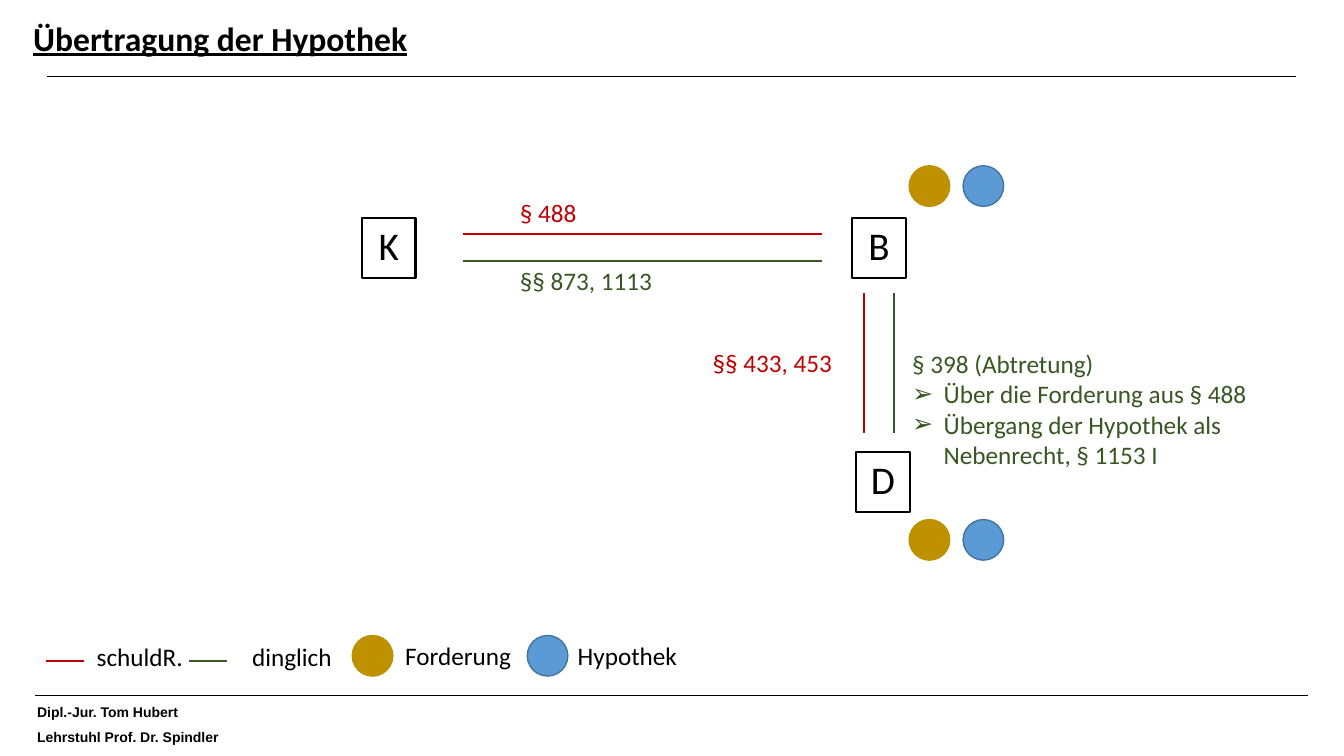
"""Build the slide on the transfer of a mortgage (Übertragung der Hypothek)."""
from lxml import etree
from pptx import Presentation
from pptx.dml.color import RGBColor
from pptx.enum.shapes import MSO_CONNECTOR, MSO_SHAPE
from pptx.enum.text import MSO_ANCHOR, MSO_AUTO_SIZE, PP_ALIGN
from pptx.oxml.ns import qn
from pptx.util import Pt

STRAIGHT = MSO_CONNECTOR.STRAIGHT
RECT, OVAL = MSO_SHAPE.RECTANGLE, MSO_SHAPE.OVAL
MIDDLE = MSO_ANCHOR.MIDDLE
LEFT, CENTER = PP_ALIGN.LEFT, PP_ALIGN.CENTER
NO_FIT = MSO_AUTO_SIZE.NONE

COLORS = {"black": "000000", "red": "C00000", "green": "385723",
          "gold": "BF9000", "blue": "5B9BD5", "rim": "43739E"}


def color(name):
    return RGBColor.from_string(COLORS[name])


def write(para, text, size, name, face="Calibri", bold=False):
    run = para.add_run()
    run.text = text
    font = run.font
    font.name, font.size, font.bold = face, Pt(size), bold
    font.color.rgb = color(name)
    return run


deck = Presentation()
deck.slide_width, deck.slide_height = Pt(960), Pt(540)
slide = deck.slides.add_slide(deck.slide_layouts[1])
shapes = slide.shapes

title = shapes.title
title.left, title.top, title.width, title.height = Pt(16.5), Pt(9.4), Pt(909.5), Pt(39)
title.text_frame.vertical_anchor = MIDDLE
title.text_frame.auto_size = NO_FIT
head = title.text_frame.paragraphs[0]
head.alignment, head.line_spacing = LEFT, 0.9
write(head, "Übertragung der Hypothek", 24, "black", bold=True).font.underline = True

for x1, y1, x2, y2, name, width in [
    (33.8, 54.7, 926, 54.7, "black", 1),
    (25.2, 496.8, 934, 496.8, "black", 1),
    (331, 167, 587, 167, "red", 1.5),
    (331, 186.5, 587, 186.5, "green", 1.5),
    (617, 209.5, 617, 309, "red", 1.5),
    (638.6, 209.5, 638.6, 309, "green", 1.5),
    (32.6, 472.3, 59.8, 472.3, "red", 1.5),
    (134.8, 472.3, 162, 472.3, "green", 1.5),
]:
    line = shapes.add_connector(STRAIGHT, Pt(x1), Pt(y1), Pt(x2), Pt(y2))
    line.line.color.rgb = color(name)
    line.line.width = Pt(width)
    etree.SubElement(line._element.spPr, qn("a:effectLst"))

for text, x, y in [("K", 258.4, 155.4), ("B", 608.6, 155.4), ("D", 611.4, 322.8)]:
    box = shapes.add_shape(RECT, Pt(x), Pt(y), Pt(38.4), Pt(43))
    box.shadow.inherit = False
    box.fill.background()
    box.line.color.rgb = color("black")
    box.line.width = Pt(1.5)
    box.text_frame.vertical_anchor = MIDDLE
    para = box.text_frame.paragraphs[0]
    para.alignment, para.line_spacing, para.space_before = CENTER, 0.9, Pt(10)
    write(para, text, 28, "black")

for gold_x, blue_x, y in [(649.4, 687.9, 118.4), (649.4, 687.9, 371.1), (251.6, 376.6, 453.9)]:
    for x, name, rim in [(gold_x, "gold", "gold"), (blue_x, "blue", "rim")]:
        dot = shapes.add_shape(OVAL, Pt(x), Pt(y), Pt(29), Pt(29))
        dot.shadow.inherit = False
        dot.fill.solid()
        dot.fill.fore_color.rgb = color(name)
        dot.line.color.rgb = color(rim)
        dot.line.width = Pt(1)

for text, x, y, width, name in [
    ("§ 488", 364.3, 137.5, 204, "red"),
    ("§§ 873, 1113", 364.3, 185.8, 164, "green"),
    ("§§ 433, 453", 502, 244.4, 204, "red"),
    ("schuldR.", 62, 454.6, 164, "black"),
    ("dinglich", 173, 454.6, 164, "black"),
    ("Forderung", 282.4, 453.6, 164, "black"),
    ("Hypothek", 405.6, 453.6, 164, "black"),
]:
    label = shapes.add_textbox(Pt(x), Pt(y), Pt(width), Pt(29))
    label.text_frame.word_wrap = True
    write(label.text_frame.paragraphs[0], text, 18, name)

for text, y, width in [("Dipl.-Jur. Tom Hubert", 499, 117.4),
                       ("Lehrstuhl Prof. Dr. Spindler", 517, 149)]:
    foot = shapes.add_textbox(Pt(19.5), Pt(y), Pt(width), Pt(19.4))
    foot.text_frame.word_wrap = False
    write(foot.text_frame.paragraphs[0], text, 10, "black", "Arial", True)

body = slide.placeholders[1]
body.left, body.top, body.width, body.height = Pt(644.4), Pt(245.3), Pt(295.2), Pt(94.5)
frame = body.text_frame
frame.auto_size = NO_FIT
for i, (text, mark) in enumerate([
    ("§ 398 (Abtretung)", ""),
    ("Über die Forderung aus § 488", "➢"),
    ("Übergang der Hypothek als Nebenrecht, § 1153 I", "➢"),
]):
    para = frame.add_paragraph() if i else frame.paragraphs[0]
    para.space_before = Pt(0)
    write(para, text, 18, "green")
    props = para._p.get_or_add_pPr()
    indent = Pt(22.5) if mark else 0
    props.set("marL", str(indent))
    props.set("indent", str(-indent))
    if mark:
        etree.SubElement(props, qn("a:buChar")).set("char", mark)
    else:
        etree.SubElement(props, qn("a:buNone"))

deck.save("out.pptx")
